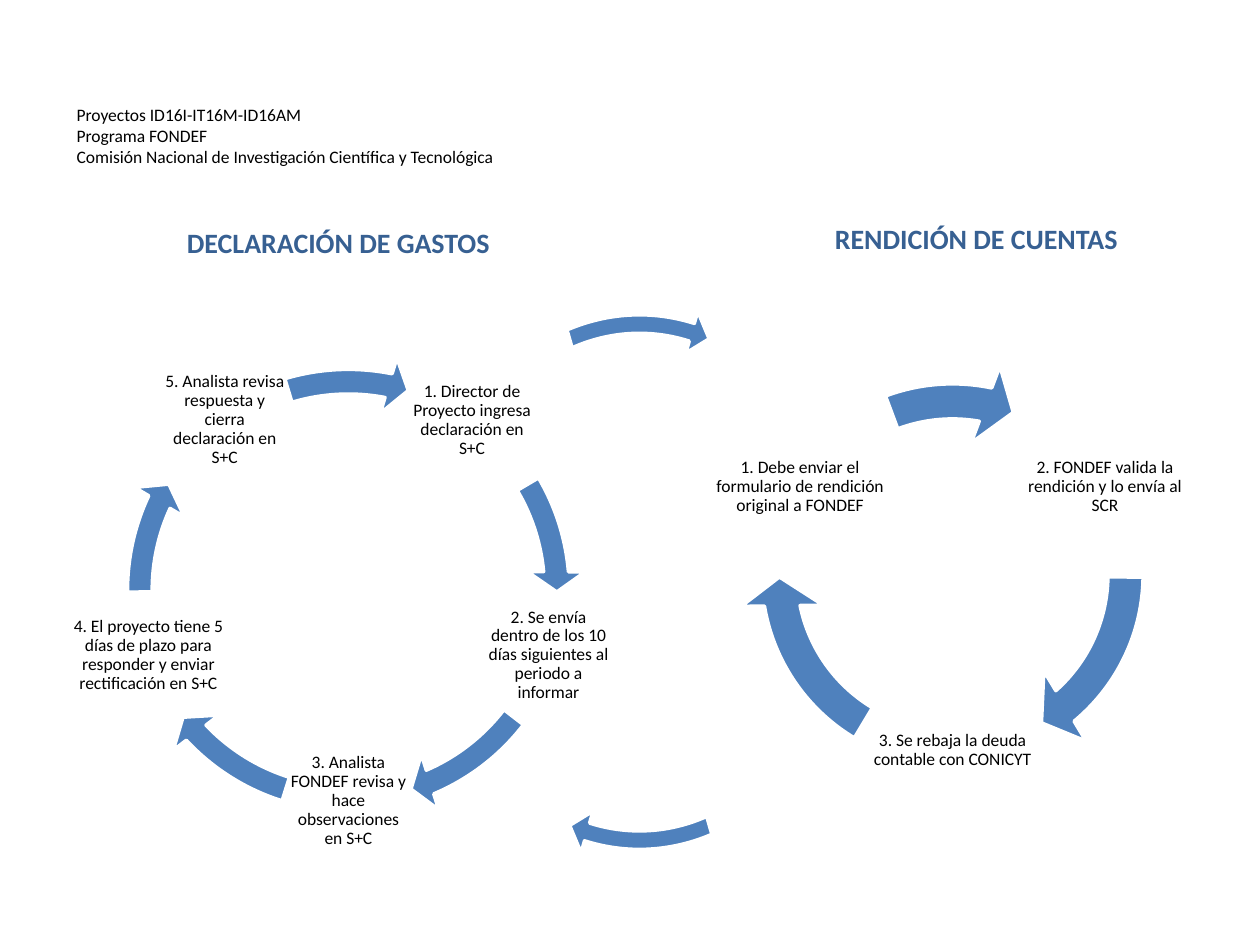
import math
from dataclasses import dataclass

import pptx
import pptx.dml.color
import pptx.enum.shapes
import pptx.enum.text
import pptx.util

Pt = pptx.util.Pt
RGB = pptx.dml.color.RGBColor
Align = pptx.enum.text.PP_ALIGN
Anchor = pptx.enum.text.MSO_ANCHOR


@dataclass(frozen=True)
class Theme:
    font: str = "Calibri"
    ink: RGB = RGB(0, 0, 0)
    heading: RGB = RGB(0x37, 0x60, 0x92)
    arrow: RGB = RGB(0x4F, 0x81, 0xBD)
    outline: RGB = RGB(255, 255, 255)
    heading_size: int = 16
    body_size: int = 10


@dataclass(frozen=True)
class ArrowStyle:
    thickness: float
    head_angle: float
    head_width: float


THEME = Theme()
EXPENSE_STYLE = ArrowStyle(0.052, 5.59, 0.061)
ACCOUNT_STYLE = ArrowStyle(0.082, 9.59, 0.096)
LINK_STYLE = ArrowStyle(0.04, 4.17, 0.047)

EXPENSE_STEPS = [
    ("1. Director de Proyecto ingresa declaración en S+C", 72, (329.42, 354.91)),
    ("2. Se envía dentro de los 10 días siguientes al periodo a informar", 72, (37.53, 66.94)),
    ("3. Analista FONDEF revisa y hace observaciones en S+C", 72, (107.47, 136.88)),
    ("4. El proyecto tiene 5 días de plazo para responder y enviar rectificación en S+C",
     95, (179.5, 204.99)),
    ("5. Analista revisa respuesta y cierra declaración en S+C", 72, (253.29, 281.12)),
]
ACCOUNT_STEPS = [
    ("2. FONDEF valida la rendición y lo envía al SCR", 103.7, (0.83, 49.45)),
    ("3. Se rebaja la deuda contable con CONICYT", 103.7, (120.96, 169.58)),
    ("1. Debe enviar el formulario de rendición original a FONDEF", 103.7, (249.42, 280.99)),
]


def add_text(shapes, box, text, size, color, bold=False, align=Align.CENTER,
             anchor=Anchor.TOP, margin=None, spacing=None):
    frame = shapes.add_textbox(*map(Pt, box)).text_frame
    frame.word_wrap = True
    frame.vertical_anchor = anchor
    if margin is not None:
        frame.margin_left = frame.margin_right = Pt(margin)
        frame.margin_top = frame.margin_bottom = Pt(margin)
    paragraph = frame.paragraphs[0]
    paragraph.text = text
    paragraph.alignment = align
    if spacing:
        paragraph.line_spacing = spacing
    for run in paragraph.runs:
        run.font.name = THEME.font
        run.font.size = Pt(size)
        run.font.bold = bold
        run.font.color.rgb = color
    return frame


def add_arc_arrow(shapes, box, style, start, end):
    arrow = shapes.add_shape(
        pptx.enum.shapes.MSO_SHAPE.CIRCULAR_ARROW, *map(Pt, box))
    arrow.shadow.inherit = False
    arrow.fill.solid()
    arrow.fill.fore_color.rgb = THEME.arrow
    arrow.line.color.rgb = THEME.outline
    arrow.line.width = Pt(2)
    units_per_degree = 0.6
    values = (style.thickness, style.head_angle * units_per_degree,
              end * units_per_degree, start * units_per_degree, style.head_width)
    for index, value in enumerate(values):
        arrow.adjustments[index] = value
    return arrow


def add_project_header(slide, box):
    add_text(slide.shapes, box,
             "Proyectos ID16I-IT16M-ID16AM\vPrograma FONDEF\v"
             "Comisión Nacional de Investigación Científica y Tecnológica",
             THEME.body_size, THEME.ink, align=Align.LEFT, anchor=Anchor.MIDDLE)


def add_heading(slide, box, text):
    frame = add_text(slide.shapes, box, text, THEME.heading_size, THEME.heading, bold=True)
    frame.auto_size = pptx.enum.text.MSO_AUTO_SIZE.SHAPE_TO_FIT_TEXT


def add_cycle(slide, box, steps, style, radius, first_angle, label_height):
    left, top, width, height = box
    center_x, center_y = left + width / 2, top + height / 2
    shapes = slide.shapes.add_group_shape().shapes
    for index, (text, label_width, (start, end)) in enumerate(steps):
        angle = math.radians(first_angle + index * 360 / len(steps))
        label_box = (center_x + radius * math.cos(angle) - label_width / 2,
                     center_y + radius * math.sin(angle) - label_height / 2,
                     label_width, label_height)
        add_text(shapes, label_box, text, THEME.body_size, THEME.ink,
                 anchor=Anchor.MIDDLE, margin=0.9, spacing=0.9)
        add_arc_arrow(shapes, box, style, start, end)


def add_cycle_links(slide, box):
    for rotation in (0, 180):
        link = add_arc_arrow(slide.shapes, box, LINK_STYLE, 253.98, 281.85)
        link.rotation = rotation


def main():
    presentation = pptx.Presentation()
    presentation.slide_width, presentation.slide_height = Pt(720), Pt(540)
    slide = presentation.slides.add_slide(presentation.slide_layouts[6])

    add_heading(slide, (42.5, 125.3, 301.7, 26.6), "DECLARACIÓN DE GASTOS")
    add_cycle(slide, (63.4, 201.6, 271.4, 271.4), EXPENSE_STEPS, EXPENSE_STYLE,
              radius=120.2, first_angle=-54, label_height=72)
    add_heading(slide, (426.2, 123.1, 263.5, 26.6), "RENDICIÓN DE CUENTAS")
    add_cycle(slide, (421.9, 205.9, 244.8, 244.8), ACCOUNT_STEPS, ACCOUNT_STYLE,
              radius=100.6, first_angle=-30, label_height=103.7)
    add_cycle_links(slide, (233.3, 172.8, 264.2, 319.7))
    add_project_header(slide, (36.7, 37.4, 562.3, 79.9))

    presentation.save("out.pptx")


if __name__ == "__main__":
    main()
